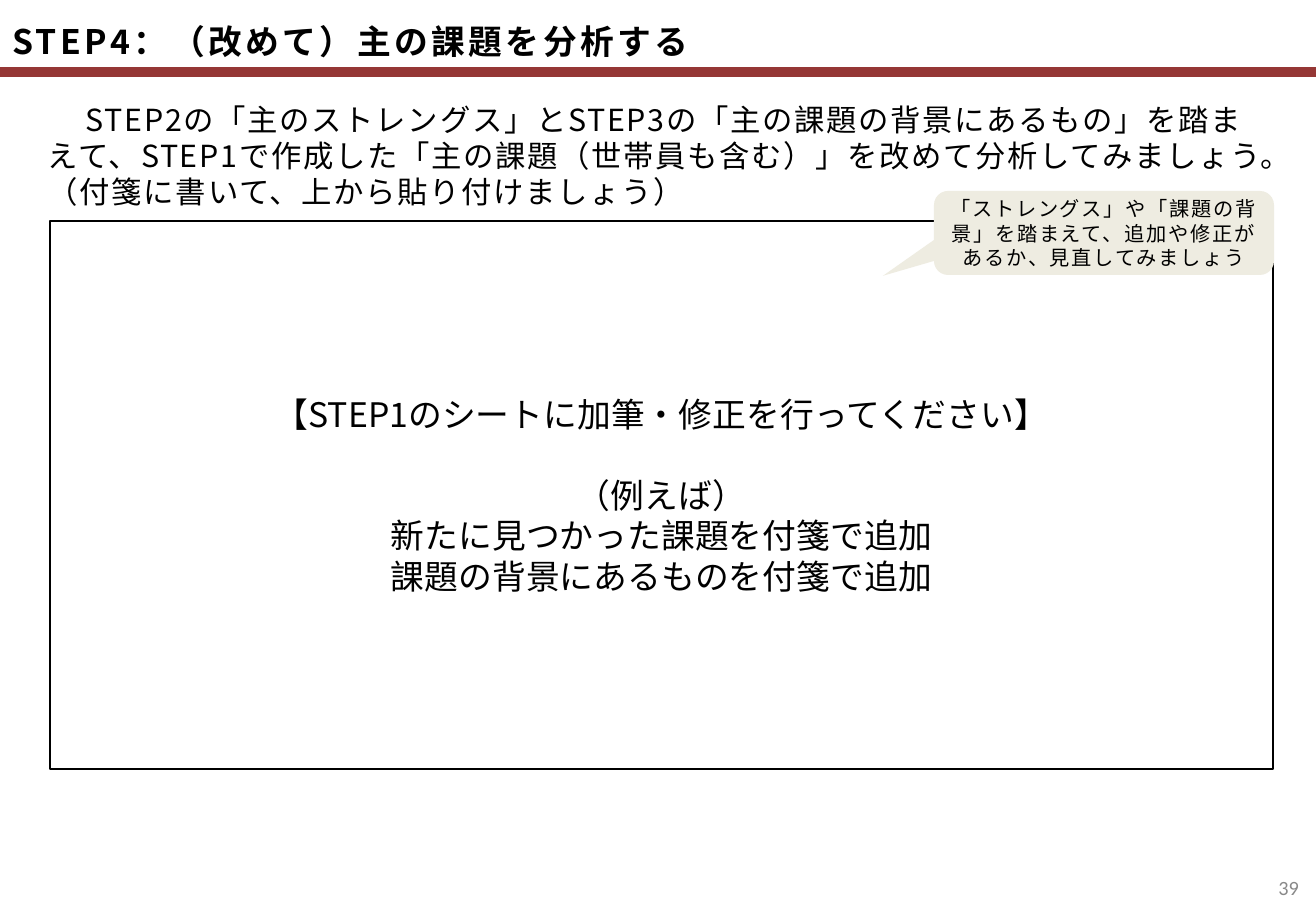
from lxml import etree
from pptx import Presentation, util as u
from pptx.dml.color import RGBColor
from pptx.enum import shapes, text
from pptx.oxml.ns import qn

# Content
TITLE = "STEP4：（改めて）主の課題を分析する"
SHEET = [
    "【STEP1のシートに加筆・修正を行ってください】",
    "（例えば）",
    "新たに見つかった課題を付箋で追加",
    "課題の背景にあるものを付箋で追加",
]
CALLOUT = "「ストレングス」や「課題の背景」を踏まえて、追加や修正があるか、見直してみましょう"
INTRO = (
    "STEP2の「主のストレングス」とSTEP3の「主の課題の背景にあるもの」を踏まえて、"
    "STEP1で作成した「主の課題（世帯員も含む）」を改めて分析してみましょう。"
    "（付箋に書いて、上から貼り付けましょう）"
)
PAGE_NUMBER = "39"

# Layout in px
PX_PER_INCH = 121.5
WIDTH, HEIGHT = 1316, 911
RULE_Y = 72
TITLE_BOX = (0, 0, 1281, 72)
INTRO_BOX = (36, 95, 1244, 156)
SHEET_BOX = (50, 221, 1223, 548)
CALLOUT_BOX = (934, 191, 340, 84)
NUMBER_BOX = (1260, 863, 51, 49)
INTRO_INDENT = 38

JAPANESE = "Noto Sans CJK JP"
LEFT, CENTER, RIGHT = text.PP_ALIGN.LEFT, text.PP_ALIGN.CENTER, text.PP_ALIGN.RIGHT
MIDDLE, TOP = text.MSO_ANCHOR.MIDDLE, text.MSO_ANCHOR.TOP


def px(length):
    return u.Emu(round(length * 914400 / PX_PER_INCH))


def color(value):
    return RGBColor.from_string(value)


def place(box):
    return [px(length) for length in box]


def write(shape, lines, size, align=LEFT, anchor=MIDDLE, ink="000000",
          face=JAPANESE, bold=False, tracking=0, leading=None):
    """Fill a shape with evenly formatted paragraphs."""
    frame = shape.text_frame
    frame.word_wrap = True
    frame.auto_size = text.MSO_AUTO_SIZE.NONE
    frame.vertical_anchor = anchor
    frame.text = "\n".join(lines)
    for para in frame.paragraphs:
        para.alignment = align
        if leading:
            para.line_spacing = u.Pt(leading)
        font = para.font
        font.size, font.bold, font.name = u.Pt(size), bold, face
        font.color.rgb = color(ink)
        props = para._p.pPr.find(qn("a:defRPr"))
        props.set("spc", str(tracking * 100))
        etree.SubElement(props, qn("a:ea")).set("typeface", face)
    return frame


def add_panel(page, kind, box, fill, outline=None):
    panel = page.shapes.add_shape(kind, *place(box))
    panel.shadow.inherit = False
    panel.fill.solid()
    panel.fill.fore_color.rgb = color(fill)
    if outline:
        panel.line.color.rgb = color(outline)
        panel.line.width = u.Pt(1)
    else:
        panel.line.fill.background()
    return panel


def main():
    deck = Presentation()
    deck.slide_width, deck.slide_height = px(WIDTH), px(HEIGHT)
    page = deck.slides.add_slide(deck.slide_layouts.get_by_name("Title Only"))

    # Rule under the title
    rule = page.shapes.add_connector(
        shapes.MSO_CONNECTOR.STRAIGHT, *place((0, RULE_Y, WIDTH, RULE_Y)))
    rule.line.color.rgb = color("953735")
    rule.line.width = u.Pt(6)
    etree.SubElement(rule._element.spPr, qn("a:effectLst"))

    # Title
    title = page.shapes.title
    title.left, title.top, title.width, title.height = place(TITLE_BOX)
    frame = write(title, [TITLE], 20, bold=True, tracking=2, leading=24)
    frame.margin_top, frame.margin_bottom = px(10), 0

    # Worksheet panel, with a gap of one line after its heading
    sheet = add_panel(page, shapes.MSO_SHAPE.RECTANGLE, SHEET_BOX, "FFFFFF", "000000")
    frame = write(sheet, SHEET, 20, CENTER, leading=24)
    frame.paragraphs[1].space_before = u.Pt(24)

    # Callout
    callout = add_panel(
        page, shapes.MSO_SHAPE.ROUNDED_RECTANGULAR_CALLOUT, CALLOUT_BOX, "EEECE1")
    callout.adjustments[0], callout.adjustments[1] = -0.65, 0.51
    write(callout, [CALLOUT], 12, CENTER, tracking=1, leading=14.5)

    # Introduction, first line indented
    intro = page.shapes.add_textbox(*place(INTRO_BOX))
    frame = write(intro, [INTRO], 18, anchor=TOP, tracking=1, leading=21.5)
    frame.paragraphs[0]._p.pPr.set("indent", str(px(INTRO_INDENT)))

    # Page number
    number = page.shapes.add_textbox(*place(NUMBER_BOX))
    write(number, [PAGE_NUMBER], 12, RIGHT, ink="898989", face="Calibri")

    deck.save("out.pptx")


if __name__ == "__main__":
    main()
